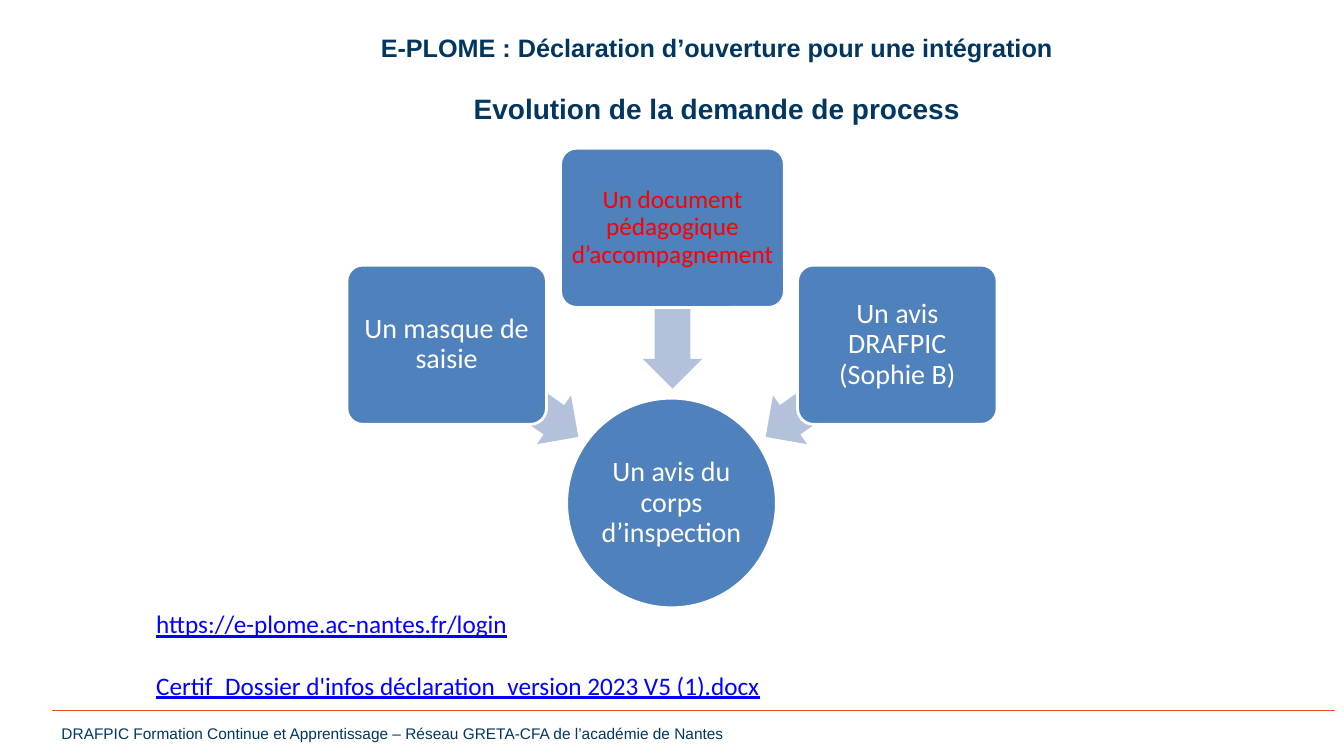
from pptx import Presentation
from pptx.dml.color import RGBColor
from pptx.enum.shapes import MSO_CONNECTOR, MSO_SHAPE as SHAPE
from pptx.enum.text import MSO_ANCHOR as ANCHOR, PP_ALIGN as ALIGN
from pptx.oxml.ns import qn
from pptx.util import Inches, Pt
from lxml.etree import SubElement

COLORS = {"navy": "00365F", "orange": "E94E1B", "blue": "4F81BD", "arrow": "B3C1DB",
          "white": "FFFFFF", "red": "FF0000", "link": "0000FF"}


def color(name):
    return RGBColor.from_string(COLORS[name])


def write(sp, lines, font, ink, align, anchor, inset=None, gap=0, bold=None, underline=None):
    tf = sp.text_frame
    tf.word_wrap = True
    tf.vertical_anchor = anchor
    if inset is not None:
        tf.margin_left = tf.margin_right = tf.margin_top = tf.margin_bottom = Inches(inset)
    for i, (text, size) in enumerate(lines):
        p = tf.add_paragraph() if i else tf.paragraphs[0]
        p.text = text
        p.alignment = align
        if i:
            p.space_before = Pt(gap)
        f = p.runs[0].font
        f.name, f.size, f.bold, f.underline = font, Pt(size), bold, underline
        f.color.rgb = color(ink)


prs = Presentation()
prs.slide_width, prs.slide_height = Inches(13.33), Inches(7.5)
s = prs.slides.add_slide(prs.slide_layouts[6])

rule = s.shapes.add_connector(MSO_CONNECTOR.STRAIGHT, Inches(0.52), Inches(7.05),
                              Inches(13.24), Inches(7.05))
rule.line.color.rgb = color("orange")
rule.line.width = Pt(0.25)
SubElement(rule._element.spPr, qn("a:effectLst"))

footer = s.shapes.add_textbox(Inches(0.61), Inches(7.08), Inches(7.65), Inches(0.29))
write(footer, [("DRAFPIC Formation Continue et Apprentissage – Réseau GRETA-CFA de l’académie de Nantes", 11)],
      "Arial", "navy", ALIGN.LEFT, ANCHOR.BOTTOM, inset=0)

title = s.shapes.add_textbox(Inches(1.45), Inches(0.27), Inches(11.32), Inches(1.04))
write(title, [("E-PLOME : Déclaration d’ouverture pour une intégration", 18),
              ("Evolution de la demande de process", 20)],
      "Arial", "navy", ALIGN.CENTER, ANCHOR.TOP, gap=21, bold=True)

arrows = [(4.28, 3.58, 215), (5.87, 2.76, 270), (7.45, 3.58, 325)]
for left, top, angle in arrows:
    sp = s.shapes.add_shape(SHAPE.LEFT_ARROW, Inches(left), Inches(top), Inches(1.6), Inches(0.59))
    sp.adjustments[0], sp.adjustments[1] = 0.6, 0.5
    sp.rotation = angle
    sp.shadow.inherit = False
    sp.fill.solid()
    sp.fill.fore_color.rgb = color("arrow")
    sp.line.fill.background()

steps = [
    (SHAPE.OVAL, 5.62, 3.95, 2.08, 2.08, "Un avis du corps d’inspection", 20, "white", 0.01),
    (SHAPE.ROUNDED_RECTANGLE, 3.44, 2.63, 1.98, 1.58, "Un masque de saisie", 20, "white", 0.04),
    (SHAPE.ROUNDED_RECTANGLE, 5.56, 1.47, 2.22, 1.58, "Un document pédagogique d’accompagnement", 18, "red", 0.04),
    (SHAPE.ROUNDED_RECTANGLE, 7.91, 2.63, 1.98, 1.58, "Un avis DRAFPIC (Sophie B)", 20, "white", 0.04),
]
for kind, left, top, width, height, text, size, ink, inset in steps:
    sp = s.shapes.add_shape(kind, Inches(left), Inches(top), Inches(width), Inches(height))
    if kind == SHAPE.ROUNDED_RECTANGLE:
        sp.adjustments[0] = 0.1
    sp.shadow.inherit = False
    sp.fill.solid()
    sp.fill.fore_color.rgb = color("blue")
    sp.line.color.rgb = color("white")
    sp.line.width = Pt(2)
    write(sp, [(text, size)], "Calibri", ink, ALIGN.CENTER, ANCHOR.MIDDLE, inset=inset)
    sp.text_frame.paragraphs[0].line_spacing = 0.9

links = s.shapes.add_textbox(Inches(1.45), Inches(5.99), Inches(11.11), Inches(1.01))
write(links, [("https://e-plome.ac-nantes.fr/login", 18),
              ("Certif_Dossier d'infos déclaration_version 2023 V5 (1).docx", 18)],
      "Calibri", "link", ALIGN.LEFT, ANCHOR.TOP, gap=22, underline=True)

prs.save("out.pptx")
